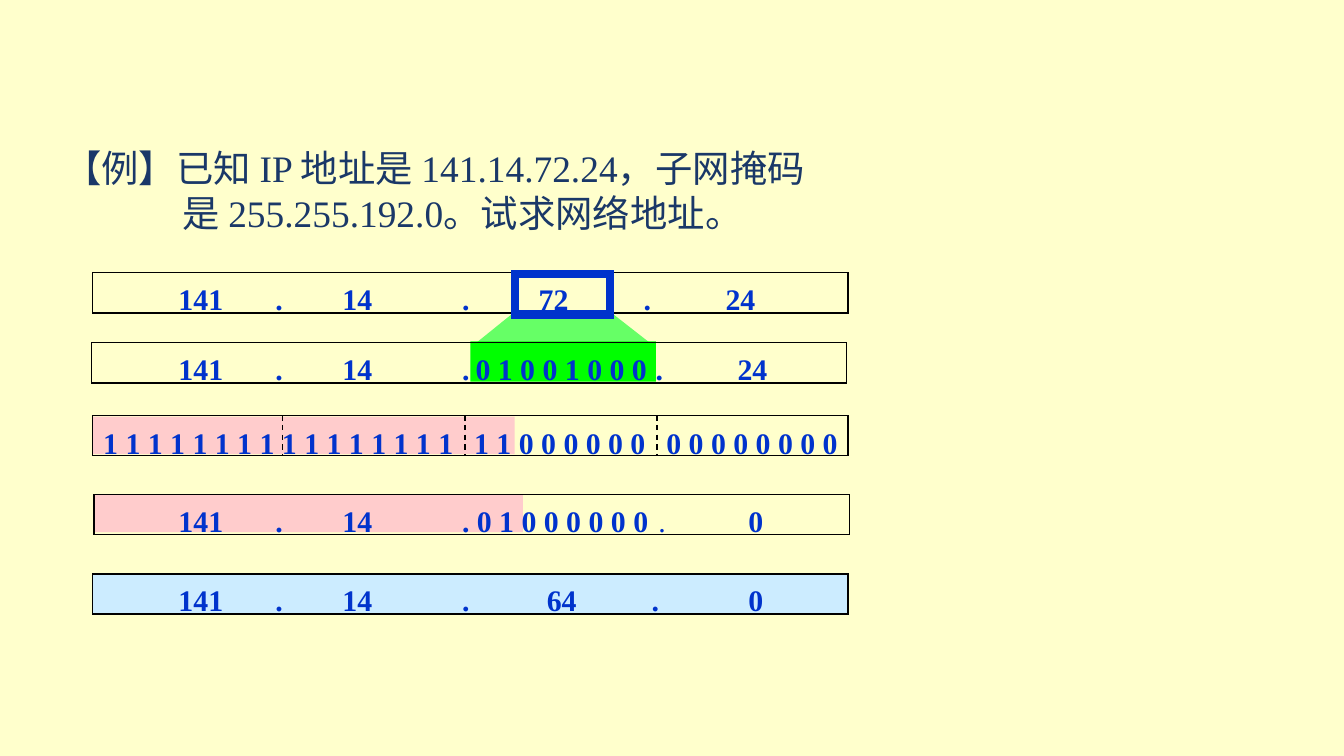
"""Build a slide that works out a network address from an IP address and a subnet mask."""
import dataclasses

import pptx
import pptx.dml.color
import pptx.enum.dml
import pptx.enum.shapes
import pptx.enum.text
import pptx.oxml.ns
import pptx.util
from lxml import etree

Inches = pptx.util.Inches
RGB = pptx.dml.color.RGBColor.from_string


@dataclasses.dataclass(frozen=True)
class Theme:
    font: str = "Times New Roman"
    background: str = "FFFFCC"
    title: str = "1A3868"
    digits: str = "0033CC"
    outline: str = "000000"
    network: str = "FFCCCC"
    answer: str = "CCECFF"
    beam: str = "66FF66"
    octet: str = "00FF00"
    title_size: int = 20
    digit_size: int = 16
    thin: float = 0.75
    thick: float = 4.5


theme = Theme()
deck = pptx.Presentation()
deck.slide_width = Inches(10)
deck.slide_height = deck.slide_width * 9 // 16
slide = deck.slides.add_slide(deck.slide_layouts[6])
slide.background.fill.solid()
slide.background.fill.fore_color.rgb = RGB(theme.background)


def add_bar(left, top, width, height, fill=None, line=None, weight=theme.thin):
    bar = slide.shapes.add_shape(
        pptx.enum.shapes.MSO_SHAPE.RECTANGLE,
        Inches(left), Inches(top), Inches(width), Inches(height))
    bar.shadow.inherit = False
    if fill:
        bar.fill.solid()
        bar.fill.fore_color.rgb = RGB(fill)
    else:
        bar.fill.background()
    if line:
        bar.line.color.rgb = RGB(line)
        bar.line.width = pptx.util.Pt(weight)
        etree.SubElement(bar.line._get_or_add_ln(), pptx.oxml.ns.qn("a:miter"), lim="800000")
    else:
        bar.line.fill.background()


def add_digits(left, top, width, text, stops=(), bold=True):
    box = slide.shapes.add_textbox(Inches(left), Inches(top), Inches(width), Inches(0.37))
    box.text_frame.word_wrap = False
    paragraph = box.text_frame.paragraphs[0]
    paragraph.text = text
    if stops:
        tab_list = etree.SubElement(
            paragraph._p.get_or_add_pPr(), pptx.oxml.ns.qn("a:tabLst"))
        for stop in stops:
            etree.SubElement(tab_list, pptx.oxml.ns.qn("a:tab"),
                             pos=str(Inches(stop)), algn="l")
    paragraph.font.name = theme.font
    paragraph.font.size = pptx.util.Pt(theme.digit_size)
    paragraph.font.bold = bold
    paragraph.font.color.rgb = RGB(theme.digits)
    return paragraph


question_box = slide.shapes.add_textbox(Inches(0.38), Inches(0.94), Inches(6.03), Inches(0.86))
question_box.text_frame.word_wrap = True
question_box.text_frame.vertical_anchor = pptx.enum.text.MSO_ANCHOR.BOTTOM
question = question_box.text_frame.paragraphs[0]
question.text = "【例】已知 IP 地址是 141.14.72.24，子网掩码\v是 255.255.192.0。试求网络地址。"
hanging = question._p.get_or_add_pPr()
hanging.set("marL", str(Inches(0.88)))
hanging.set("indent", str(-Inches(0.88)))
question.font.name = theme.font
question.font.size = pptx.util.Pt(theme.title_size)
question.font.color.rgb = RGB(theme.title)

beam_builder = slide.shapes.build_freeform(Inches(3.83), Inches(2.32))
beam_builder.add_line_segments(
    [(Inches(x), Inches(y)) for x, y in [(4.54, 2.32), (4.86, 2.57), (3.52, 2.57)]])
beam = beam_builder.convert_to_shape()
beam.shadow.inherit = False
beam.fill.solid()
beam.fill.fore_color.rgb = RGB(theme.beam)
beam.line.fill.background()

add_bar(3.5, 2.54, 1.38, 0.3, theme.octet)
add_bar(0.69, 3.1, 3.14, 0.28, theme.network)
add_bar(0.7, 3.68, 3.19, 0.28, theme.network)

for left, top, fill in [(0.69, 2.03, None), (0.68, 2.55, None), (0.69, 3.09, None),
                        (0.7, 3.68, None), (0.69, 4.27, theme.answer)]:
    add_bar(left, top, 5.62, 0.3, fill, theme.outline)

for divider_x in (2.1, 3.46, 4.89):
    divider = slide.shapes.add_connector(
        pptx.enum.shapes.MSO_CONNECTOR.STRAIGHT,
        Inches(divider_x), Inches(3.09), Inches(divider_x), Inches(3.38))
    divider.line.color.rgb = RGB(theme.outline)
    divider.line.width = pptx.util.Pt(theme.thin)
    divider.line.dash_style = pptx.enum.dml.MSO_LINE.DASH
    etree.SubElement(divider._element.spPr, pptx.oxml.ns.qn("a:effectLst"))

prefix = "141\t.\t14\t."
prefix_stops = (0.72, 1.22, 2.11)
for top, width, octet_bits in [(2.04, 2.37, ""), (2.56, 2.37, ""),
                               (3.69, 3.76, " 0 1 0 0 0 0 0 0"), (4.28, 2.37, "")]:
    add_digits(1.23, top, width, prefix + octet_bits, prefix_stops)

for left, top, width, text, stops in [
    (3.91, 2.04, 1.81, "72\t.\t24", (0.78, 1.39)),
    (3.44, 2.56, 1.48, "0 1 0 0 1 0 0 0", ()),
    (4.78, 2.56, 1.03, ".\t24", (0.61,)),
    (0.67, 3.11, 4.24, "1 1 1 1 1 1 1 1 1 1 1 1 1 1 1 1\t1 1 0 0 0 0 0 0", (2.76,)),
    (4.86, 3.11, 1.48, "0 0 0 0 0 0 0 0", ()),
    (3.97, 4.28, 1.81, "64\t.\t0", (0.78, 1.5)),
]:
    add_digits(left, top, width, text, stops)

host_part = add_digits(4.8, 3.69, 0.98, ".\t", (0.67,), bold=False)
host_zero = host_part.add_run()
host_zero.text = "0"
host_zero.font.bold = True

add_bar(3.83, 2.04, 0.71, 0.3, line=theme.digits, weight=theme.thick)

deck.save("out.pptx")
